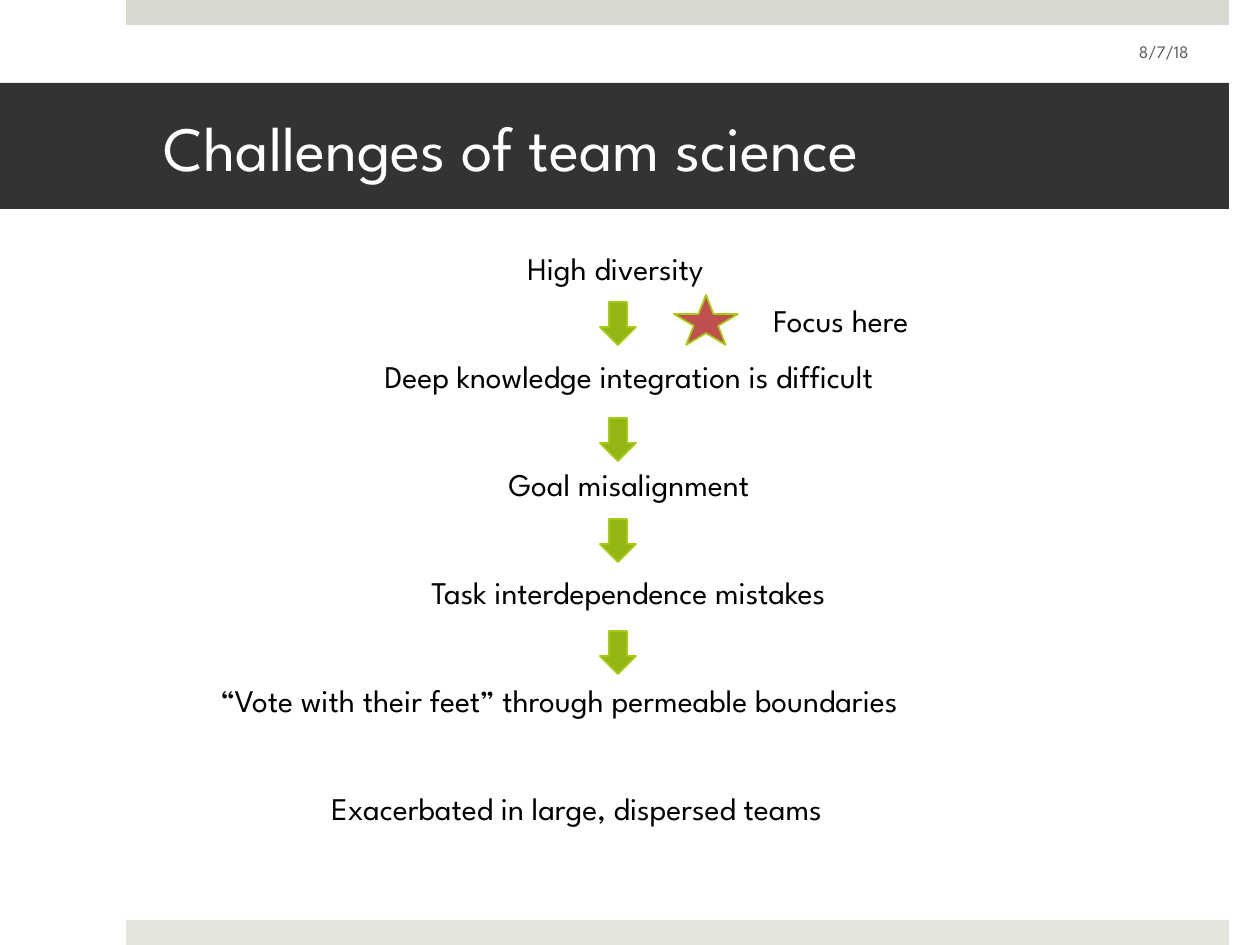
import pptx
import pptx.dml.color
import pptx.enum.shapes
import pptx.enum.text
import pptx.util

SCALE = 914400 / 126
FONT = "League Spartan"
COLORS = {
    "top_band": "D6D9CD",
    "bottom_band": "E4E6DE",
    "banner": "333333",
    "arrow": "93B614",
    "outline": "A5CC12",
    "star": "C0504D",
    "title": "FFFFFF",
    "text": "000000",
    "date": "595959",
}
SHAPES = pptx.enum.shapes.MSO_SHAPE
ALIGN = pptx.enum.text.PP_ALIGN
ANCHOR = pptx.enum.text.MSO_ANCHOR


def px(length):
    """Turn pixels into EMU."""
    return pptx.util.Emu(round(length * SCALE))


def color(key):
    """Look up a named colour."""
    return pptx.dml.color.RGBColor.from_string(COLORS[key])


def apply(target, formats):
    """Set each attribute of the target from a dict."""
    for attribute, value in formats.items():
        setattr(target, attribute, value)


def write(holder, text, size, ink, align=ALIGN.LEFT, **frame_formats):
    """Put one formatted paragraph into a text holder."""
    frame = holder.text_frame
    frame.text = text
    apply(frame, {"word_wrap": True, **frame_formats})
    paragraph = frame.paragraphs[0]
    paragraph.alignment = align
    font = paragraph.runs[0].font
    apply(font, {"name": FONT, "size": pptx.util.Pt(size)})
    font.color.rgb = color(ink)


def add_label(slide, box, text, size=18, ink="text", align=ALIGN.LEFT, **frame_formats):
    """Add a text box."""
    label = slide.shapes.add_textbox(*map(px, box))
    write(label, text, size, ink, align, **frame_formats)


def add_figure(slide, preset, box, fill, outline=None):
    """Add a filled preset shape with an optional outline."""
    figure = slide.shapes.add_shape(preset, *map(px, box))
    figure.shadow.inherit = False
    figure.fill.solid()
    figure.fill.fore_color.rgb = color(fill)
    if outline:
        figure.line.color.rgb = color(outline)
        figure.line.width = pptx.util.Pt(1)
    else:
        figure.line.fill.background()


def set_title(slide, text):
    """Format the title placeholder as a dark banner."""
    banner = slide.shapes.title
    apply(banner, {"left": px(0), "top": px(83), "width": px(1229), "height": px(126)})
    banner.fill.solid()
    banner.fill.fore_color.rgb = color("banner")
    write(
        banner, text, 36, "title",
        auto_size=pptx.enum.text.MSO_AUTO_SIZE.NONE,
        vertical_anchor=ANCHOR.MIDDLE,
        margin_left=px(164), margin_right=px(38),
        margin_top=px(6), margin_bottom=px(6),
    )


def add_chain(slide):
    """Add the evenly spaced challenges and the arrows between them."""
    challenges = [
        ("High diversity", 515, 227, ALIGN.LEFT),
        ("Deep knowledge integration is difficult", 292, 674, ALIGN.CENTER),
        ("Goal misalignment", 351, 556, ALIGN.CENTER),
        ("Task interdependence mistakes", 288, 681, ALIGN.CENTER),
        ("“Vote with their feet” through permeable boundaries", 208, 840, ALIGN.LEFT),
        ("Exacerbated in large, dispersed teams", 319, 619, ALIGN.LEFT),
    ]
    for row, (text, left, width, align) in enumerate(challenges):
        add_label(slide, (left, 243 + 108 * row, width, 50), text, align=align)
    for top in (302, 418, 519, 631):
        add_figure(slide, SHAPES.DOWN_ARROW, (600, top, 36, 43), "arrow", "outline")


def main():
    """Build and save the slide."""
    presentation = pptx.Presentation()
    apply(presentation, {"slide_width": px(1260), "slide_height": px(945)})
    slide = presentation.slides.add_slide(presentation.slide_layouts[5])
    for top, fill in ((0, "top_band"), (920, "bottom_band")):
        add_figure(slide, SHAPES.RECTANGLE, (126, top, 1103, 25), fill)
    set_title(slide, "Challenges of team science")
    add_chain(slide)
    add_figure(slide, SHAPES.STAR_5_POINT, (674, 295, 64, 50), "star", "outline")
    add_label(slide, (761, 295, 193, 50), "Focus here")
    add_label(
        slide, (907, 27, 294, 50), "8/7/18", 10, "date", ALIGN.RIGHT,
        vertical_anchor=ANCHOR.MIDDLE,
    )
    presentation.save("out.pptx")


if __name__ == "__main__":
    main()
